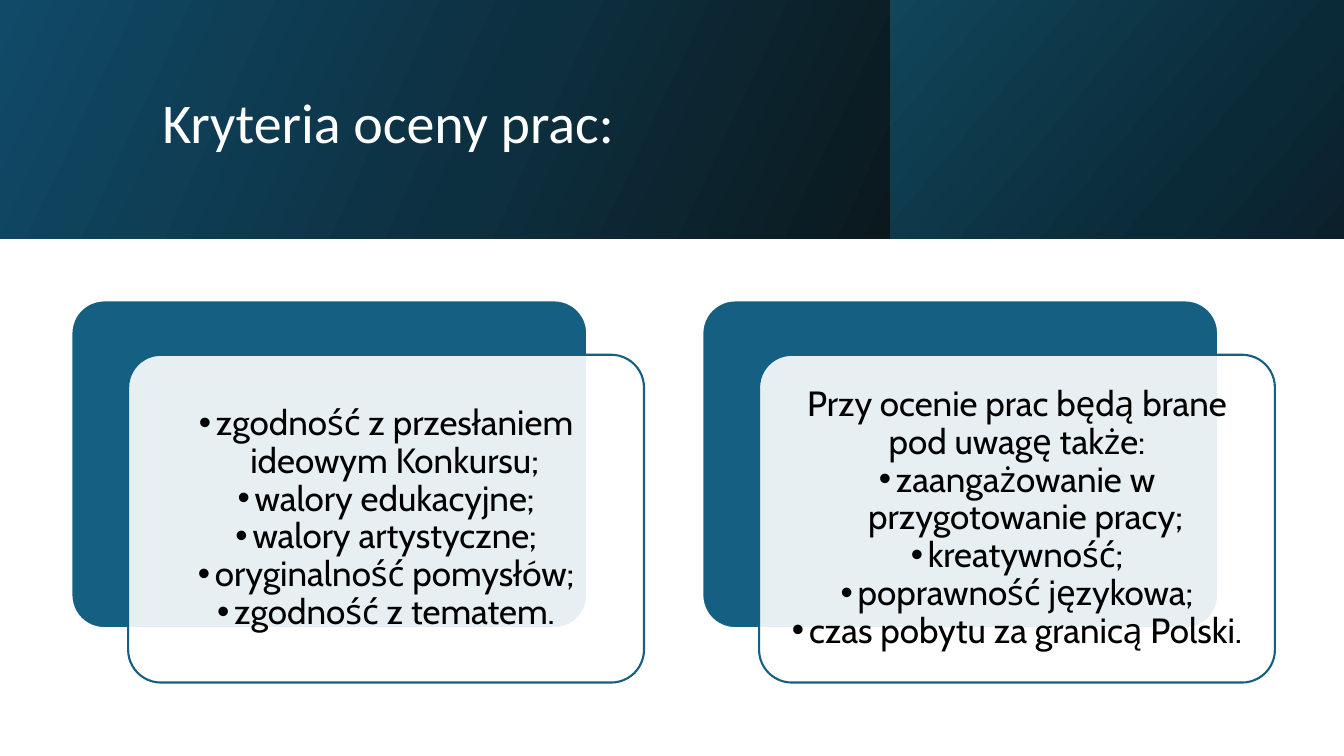
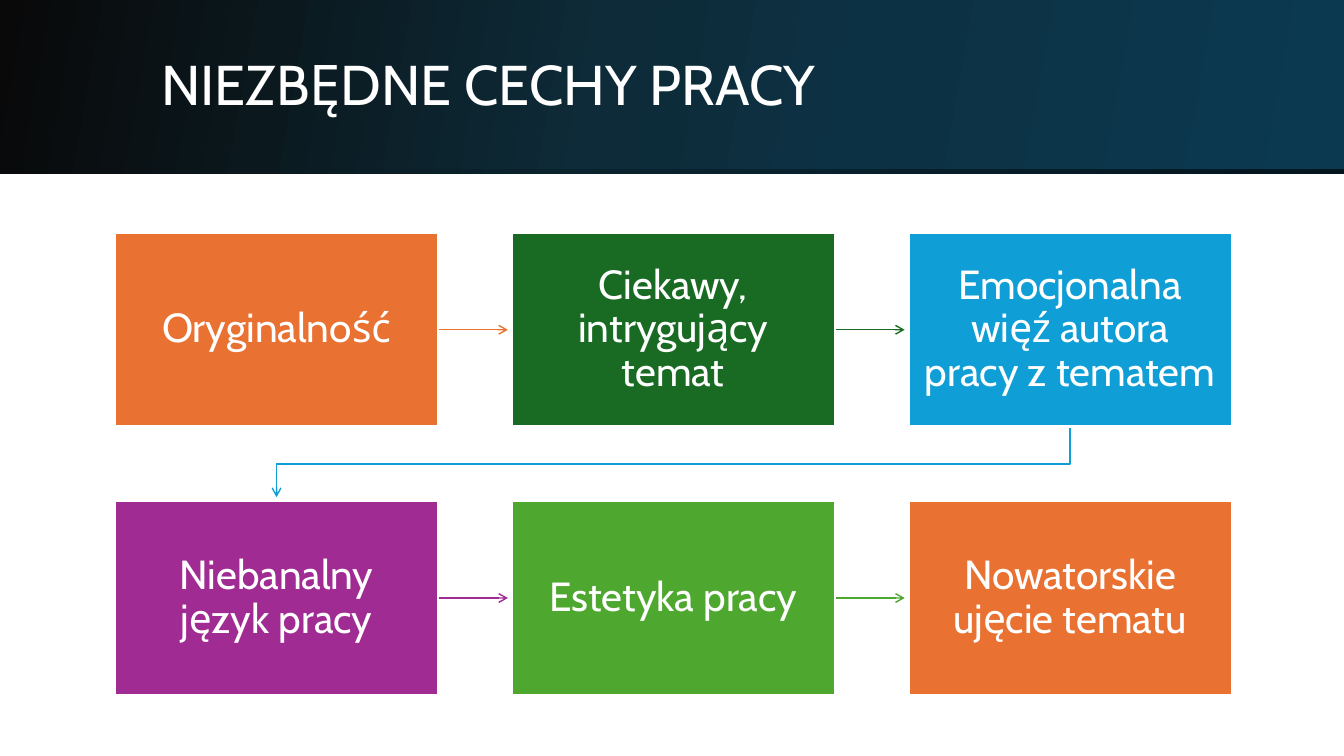
from dataclasses import dataclass

from lxml import etree
from pptx import Presentation
from pptx import util as u
from pptx.dml.color import RGBColor
from pptx.enum import shapes, text
from pptx.oxml.ns import qn


# Shared look: colours, fonts and type sizes
@dataclass(frozen=True)
class Theme:
    white: str = "FFFFFF"
    black: str = "000000"
    teal: str = "156082"
    orange: str = "E97132"
    forest: str = "196B24"
    sky: str = "0F9ED5"
    purple: str = "A02B93"
    green: str = "4EA72E"
    font: str = "Cabin"
    title_font: str = "Calibri"
    title_size: int = 40
    card_size: int = 25
    box_size: int = 29
    spacing: float = 0.9
    outline: float = 1.5
    arrow: float = 1


THEME = Theme()
SLIDE_W, SLIDE_H = 33.87, 19.05

CRITERIA = [
    (None, ["zgodność z przesłaniem ideowym Konkursu;", "walory edukacyjne;",
            "walory artystyczne;", "oryginalność pomysłów;",
            "zgodność z tematem."]),
    ("Przy ocenie prac będą brane pod uwagę także:",
     ["zaangażowanie w przygotowanie pracy;", "kreatywność;",
      "poprawność językowa;", "czas pobytu za granicą Polski."]),
]
FEATURES = [
    ("Oryginalność", THEME.orange),
    ("Ciekawy, intrygujący temat", THEME.forest),
    ("Emocjonalna więź autora pracy z tematem", THEME.sky),
    ("Niebanalny język pracy", THEME.purple),
    ("Estetyka pracy", THEME.green),
    ("Nowatorskie ujęcie tematu", THEME.orange),
]


def rgb(value):
    return RGBColor.from_string(value)


def cm(*lengths):
    return [u.Cm(length) for length in lengths]


# Basic elements
def add_block(slide, kind, at, fill=None, line=None):
    block = slide.shapes.add_shape(kind, *cm(*at))
    block.shadow.inherit = False
    if fill:
        block.fill.solid()
        block.fill.fore_color.rgb = rgb(fill)
    if line:
        block.line.color.rgb = rgb(line)
        block.line.width = u.Pt(THEME.outline)
    else:
        block.line.fill.background()
    return block


def add_band(slide, at, angle, stops):
    """Gradient rectangle; each stop is (position %, colour, opacity %)."""
    band = add_block(slide, shapes.MSO_SHAPE.RECTANGLE, at)
    band.fill.gradient()
    gradient = band.element.spPr.find(qn("a:gradFill"))
    for child in list(gradient):
        gradient.remove(child)
    stop_list = etree.SubElement(gradient, qn("a:gsLst"))
    for position, color, opacity in stops:
        stop = etree.SubElement(stop_list, qn("a:gs"), pos=str(position * 1000))
        paint = etree.SubElement(stop, qn("a:srgbClr"), val=color)
        if opacity < 100:
            etree.SubElement(paint, qn("a:alpha"), val=str(opacity * 1000))
    etree.SubElement(gradient, qn("a:lin"), ang=str(angle * 60000), scaled="0")


def format_paragraph(paragraph, font, size, color, align):
    paragraph.alignment = align
    paragraph.line_spacing = THEME.spacing
    paragraph.space_before = paragraph.space_after = u.Pt(0)
    for run in paragraph.runs:
        run.font.name = font
        run.font.size = u.Pt(size)
        run.font.color.rgb = rgb(color)


def prepare_frame(frame, inset):
    frame.word_wrap = True
    frame.auto_size = text.MSO_AUTO_SIZE.NONE
    frame.vertical_anchor = text.MSO_ANCHOR.MIDDLE
    frame.margin_left = frame.margin_right = u.Cm(inset)
    frame.margin_top = frame.margin_bottom = u.Cm(inset)


def add_bullet(paragraph, indent=0.43):
    properties = paragraph._p.get_or_add_pPr()
    properties.set("marL", str(u.Cm(indent)))
    properties.set("indent", str(-u.Cm(indent)))
    etree.SubElement(properties, qn("a:buFont"), typeface="Arial")
    etree.SubElement(properties, qn("a:buChar"), char="•")


def place_title(slide, wording, at, font):
    title = slide.shapes.title
    title.left, title.top, title.width, title.height = cm(*at)
    title.text_frame.text = wording
    prepare_frame(title.text_frame, 0.25)
    format_paragraph(title.text_frame.paragraphs[0], font, THEME.title_size,
                     THEME.white, text.PP_ALIGN.LEFT)
    # The title lies above the bands
    slide.shapes._spTree.append(title.element)


# Criteria cards
def add_card(slide, left, top, intro, items):
    width, height = 13, 8.26
    rounded = shapes.MSO_SHAPE.ROUNDED_RECTANGLE
    back = add_block(slide, rounded, (left, top, width, height),
                     THEME.teal, THEME.white)
    front = add_block(slide, rounded, (left + 1.43, top + 1.37, width, height),
                      THEME.white, THEME.teal)
    back.adjustments[0] = front.adjustments[0] = 0.1
    paint = front.element.spPr.find(qn("a:solidFill"))[0]
    etree.SubElement(paint, qn("a:alpha"), val="90000")

    frame = front.text_frame
    prepare_frame(frame, 0.25)
    lines = ([intro] if intro else []) + items
    frame.text = "\n".join(lines)
    for paragraph in frame.paragraphs:
        if paragraph.text != intro:
            add_bullet(paragraph)
        format_paragraph(paragraph, THEME.font, THEME.card_size, THEME.black,
                         text.PP_ALIGN.CENTER)


# Feature boxes and arrows
def add_feature(slide, at, wording, color):
    box = add_block(slide, shapes.MSO_SHAPE.RECTANGLE, at, color, THEME.white)
    prepare_frame(box.text_frame, 0.4)
    box.text_frame.text = wording
    format_paragraph(box.text_frame.paragraphs[0], THEME.font, THEME.box_size,
                     THEME.white, text.PP_ALIGN.CENTER)


def style_arrow(arrow, color):
    arrow.line.color.rgb = rgb(color)
    arrow.line.width = u.Pt(THEME.arrow)
    properties = arrow.element.spPr
    etree.SubElement(properties.find(qn("a:ln")), qn("a:tailEnd"), type="arrow")
    etree.SubElement(properties, qn("a:effectLst"))


def add_arrow(slide, start, end, color):
    arrow = slide.shapes.add_connector(shapes.MSO_CONNECTOR.STRAIGHT,
                                       *cm(*start, *end))
    style_arrow(arrow, color)


def add_bent_arrow(slide, points, color):
    start, *rest = [tuple(cm(*point)) for point in points]
    builder = slide.shapes.build_freeform(*start)
    builder.add_line_segments(rest, close=False)
    arrow = builder.convert_to_shape()
    arrow.fill.background()
    style_arrow(arrow, color)


# Slides
def build_criteria(slide):
    height, split = 6.02, 22.43
    add_band(slide, (0, 0, split, height), 25,
             [(0, "104A68", 100), (55, "0D3040", 100), (100, "0B191E", 100)])
    add_band(slide, (split, 0, SLIDE_W - split, height), 40,
             [(0, "10455A", 100), (70, "0B2A38", 100), (100, "0C202C", 100)])
    place_title(slide, "Kryteria oceny prac:", (3.84, 0.97, 27, 4.37),
                THEME.title_font)
    for index, (intro, items) in enumerate(CRITERIA):
        add_card(slide, 1.8 + index * 15.9, 7.57, intro, items)


def build_features(slide):
    band = (0, 0, SLIDE_W, 4.38)
    add_band(slide, band, 10,
             [(0, "090909", 100), (45, "0D2B38", 100), (65, "0D3144", 100),
              (100, "0B3A50", 100)])
    add_band(slide, band, 80,
             [(0, THEME.black, 0), (55, THEME.black, 0), (100, THEME.black, 65)])
    place_title(slide, "NIEZBĘDNE CECHY PRACY", (3.81, 0.97, 27.9, 2.44),
                THEME.font)

    columns, left, top = 3, 2.9, 5.87
    width, height, step_x, step_y = 8.14, 4.88, 10, 6.76
    clearance = 0.1
    for index, (wording, color) in enumerate(FEATURES):
        row, column = divmod(index, columns)
        x, y = left + column * step_x, top + row * step_y
        if column < columns - 1:
            middle = y + height / 2
            add_arrow(slide, (x + width, middle),
                      (x + step_x - clearance, middle), color)
        elif index < len(FEATURES) - 1:
            bottom, next_top = y + height, y + step_y
            turn = (bottom + next_top) / 2
            first = left + width / 2
            last = x + width / 2
            add_bent_arrow(slide, [(last, bottom), (last, turn), (first, turn),
                                   (first, next_top - clearance)], color)
        add_feature(slide, (x, y, width, height), wording, color)


def main():
    deck = Presentation()
    deck.slide_width, deck.slide_height = cm(SLIDE_W, SLIDE_H)
    title_only = deck.slide_layouts[5]
    for build in (build_criteria, build_features):
        build(deck.slides.add_slide(title_only))
    deck.save("out.pptx")


if __name__ == "__main__":
    main()
